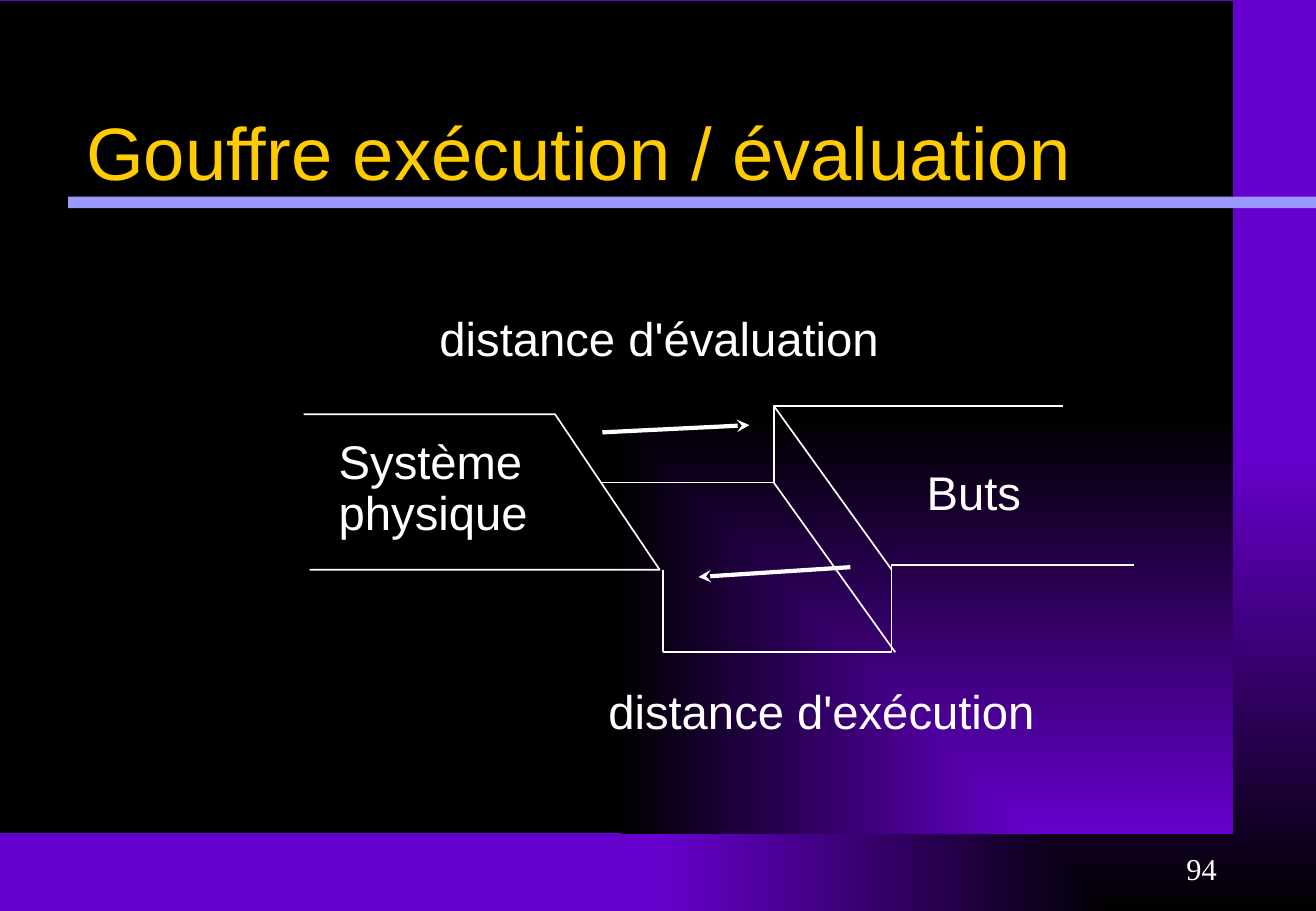
"""Build the slide on the gulf between execution and evaluation."""
from dataclasses import dataclass

from lxml import etree
from pptx import Presentation
from pptx.dml.color import RGBColor
from pptx.enum import shapes, text
from pptx.oxml import ns
from pptx.util import Pt


@dataclass(frozen=True)
class Theme:
    black: RGBColor = RGBColor(0x00, 0x00, 0x00)
    purple: RGBColor = RGBColor(0x66, 0x00, 0xCC)
    rule: RGBColor = RGBColor(0x99, 0x99, 0xFF)
    title: RGBColor = RGBColor(0xFF, 0xCC, 0x00)
    white: RGBColor = RGBColor(0xFF, 0xFF, 0xFF)
    sans: str = "Arial"
    serif: str = "Times New Roman"
    title_size: int = 44
    label_size: int = 28
    number_size: int = 18
    thin: float = 1
    thick: float = 2.5


THEME = Theme()

FAR_EDGE, NEAR_EDGE = 240.5, 337.7
FAR_FLOOR, NEAR_FLOOR = 286, 386.6
NEAR_TOP = 334.8
FAR_WALL, NEAR_WALL, PIT_LEFT = 458.6, 528.5, 393

OUTLINES = [
    [(180, 245.5), (329, 245.5), (391, NEAR_EDGE), (183.6, NEAR_EDGE)],
    [(357, FAR_FLOOR), (FAR_WALL, FAR_FLOOR), (FAR_WALL, FAR_EDGE), (630, FAR_EDGE)],
    [(PIT_LEFT, NEAR_FLOOR), (NEAR_WALL, NEAR_FLOOR), (NEAR_WALL, NEAR_TOP), (672, NEAR_TOP)],
]
EDGES = [
    ((PIT_LEFT, NEAR_EDGE), (PIT_LEFT, NEAR_FLOOR)),
    ((FAR_WALL, FAR_FLOOR), (530.6, NEAR_FLOOR)),
    ((FAR_WALL, FAR_EDGE), (NEAR_WALL, NEAR_EDGE)),
]
ARROWS = [((357, 256.3), (444.2, 252)), ((504, 336.2), (414, 342))]
LABELS = [
    (["Système", "physique"], (193.7, 256.3, 128.2, 69)),
    (["Buts"], (542.2, 275, 91.4, 38)),
    (["distance d'évaluation"], (253.4, 183.6, 322.6, 38)),
    (["distance d'exécution"], (353.5, 404.6, 271.4, 38)),
]


def apply(target, **values):
    """Set each named attribute on the target."""
    for name, value in values.items():
        setattr(target, name, value)


def points(*lengths):
    """Turn plain numbers into point lengths."""
    return [Pt(length) for length in lengths]


def corner_gradient(fill, owner, inner, outer):
    """Fill with a rectangular gradient that starts at the bottom right corner."""
    fill.gradient()
    for stop, color in zip(fill.gradient_stops, (inner, outer)):
        stop.color.rgb = color
    gradient = next(owner.iter(ns.qn("a:gradFill")))
    gradient.remove(gradient.find(ns.qn("a:lin")))
    route = etree.SubElement(gradient, ns.qn("a:path"), {"path": "rect"})
    etree.SubElement(route, ns.qn("a:fillToRect"), {"l": "100000", "t": "100000"})


def add_panel(slide, box):
    """Add a borderless rectangle behind the title."""
    shape = slide.shapes.add_shape(shapes.MSO_SHAPE.RECTANGLE, *points(*box))
    shape.shadow.inherit = False
    shape.line.fill.background()
    slide.shapes.title.element.addprevious(shape.element)
    return shape


def style_line(line, width):
    """Give a line the diagram colour and a width."""
    line.color.rgb = THEME.white
    line.width = Pt(width)


def add_outline(slide, corners):
    """Add an open unfilled outline through the corners."""
    start, *others = [points(*corner) for corner in corners]
    builder = slide.shapes.build_freeform(*start)
    builder.add_line_segments(others, close=False)
    shape = builder.convert_to_shape()
    shape.shadow.inherit = False
    shape.fill.background()
    style_line(shape.line, THEME.thin)


def add_line(slide, start, end, width, arrow=False):
    """Add a straight line, with an arrowhead at its end if asked."""
    connector = slide.shapes.add_connector(
        shapes.MSO_CONNECTOR.STRAIGHT, *points(*start, *end))
    style_line(connector.line, width)
    properties = connector.element.spPr
    if arrow:
        outline = properties.find(ns.qn("a:ln"))
        etree.SubElement(outline, ns.qn("a:tailEnd"), {"type": "stealth"})
    etree.SubElement(properties, ns.qn("a:effectLst"))


def write(shape, lines, spacing, font):
    """Write left-aligned paragraphs in one font."""
    frame = shape.text_frame
    frame.word_wrap = True
    frame.text = "\n".join(lines)
    for paragraph in frame.paragraphs:
        apply(paragraph, alignment=text.PP_ALIGN.LEFT, line_spacing=spacing)
        for run in paragraph.runs:
            apply(run.font, name=font["name"], size=Pt(font["size"]))
            run.font.color.rgb = font["color"]


def add_text(slide, lines, box, spacing, font):
    """Add a text box."""
    write(slide.shapes.add_textbox(*points(*box)), lines, spacing, font)


def set_title(slide, wording, box):
    """Place and format the title placeholder."""
    title = slide.shapes.title
    left, top, width, height = points(*box)
    apply(title, left=left, top=top, width=width, height=height)
    apply(title.text_frame, vertical_anchor=text.MSO_ANCHOR.BOTTOM,
          auto_size=text.MSO_AUTO_SIZE.NONE)
    write(title, [wording], 1.0,
          {"name": THEME.sans, "size": THEME.title_size, "color": THEME.title})


def main():
    """Build and save the slide."""
    presentation = Presentation()
    apply(presentation, slide_width=Pt(780), slide_height=Pt(540))
    slide = presentation.slides.add_slide(presentation.slide_layouts[5])

    corner_gradient(slide.background.fill, slide.element, THEME.black, THEME.purple)
    panel = add_panel(slide, (0, 0.7, 730.8, 493.2))
    corner_gradient(panel.fill, panel.element, THEME.purple, THEME.black)
    rule = add_panel(slide, (40.3, 116.6, 739.7, 6.8))
    rule.fill.solid()
    rule.fill.fore_color.rgb = THEME.rule
    set_title(slide, "Gouffre exécution / évaluation", (43.9, 43.9, 684, 75.6))

    for corners in OUTLINES:
        add_outline(slide, corners)
    for start, end in EDGES:
        add_line(slide, start, end, THEME.thin)
    label_font = {"name": THEME.sans, "size": THEME.label_size, "color": THEME.white}
    for lines, box in LABELS:
        add_text(slide, lines, box, 0.9, label_font)
    for start, end in ARROWS:
        add_line(slide, start, end, THEME.thick, arrow=True)
    add_text(slide, ["94"], (696.2, 500.4, 72, 36), 1.0,
             {"name": THEME.serif, "size": THEME.number_size, "color": THEME.white})

    presentation.save("out.pptx")


if __name__ == "__main__":
    main()
